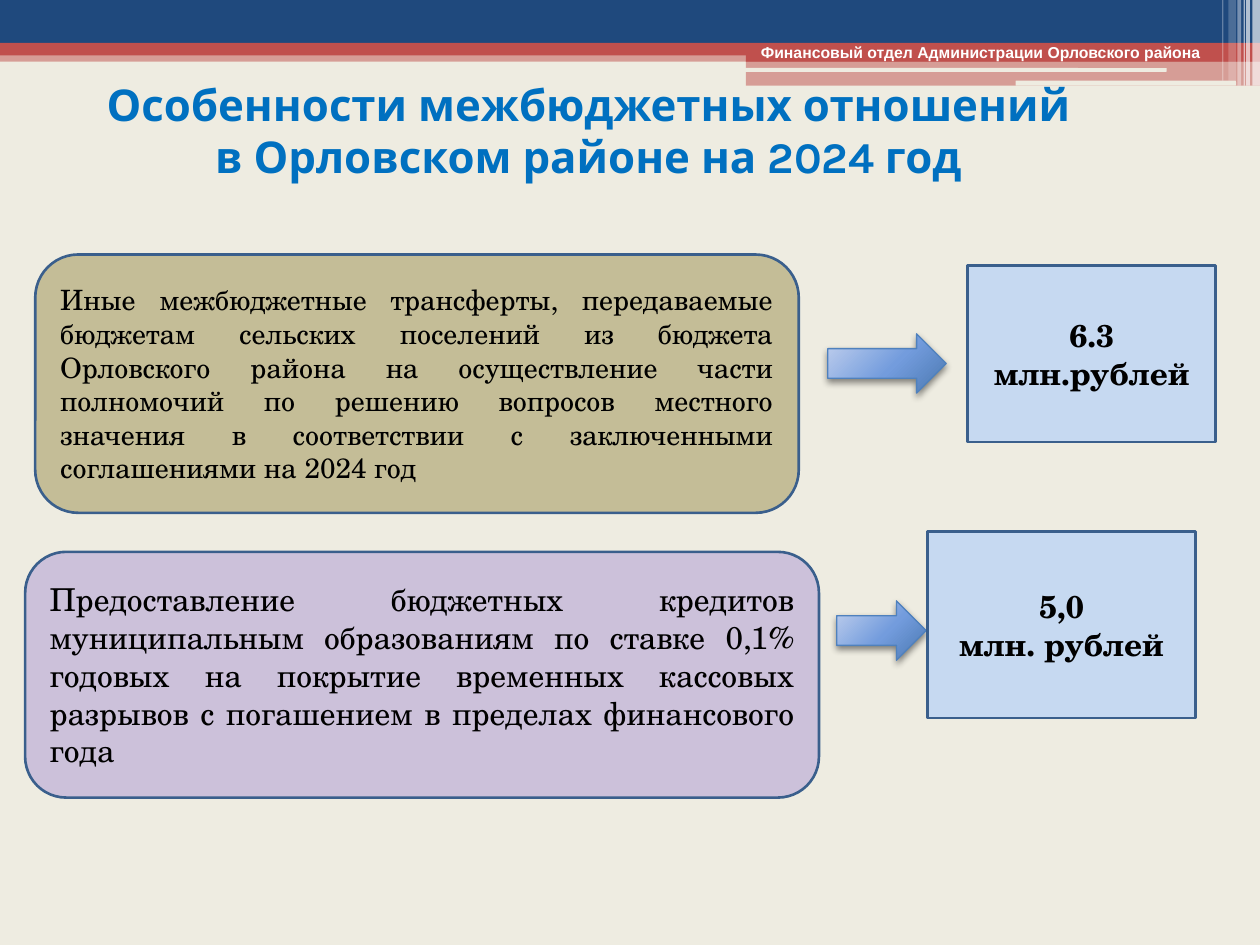
from dataclasses import dataclass

from lxml import etree
from pptx import Presentation
from pptx.dml.color import RGBColor
from pptx.enum.shapes import MSO_SHAPE
from pptx.enum.text import MSO_ANCHOR, MSO_AUTO_SIZE, PP_ALIGN
from pptx.oxml import parse_xml
from pptx.oxml.ns import nsdecls, qn
from pptx.util import Inches, Pt

RECT, ROUND, ARROW = MSO_SHAPE.RECTANGLE, MSO_SHAPE.ROUNDED_RECTANGLE, MSO_SHAPE.RIGHT_ARROW
LEFT, CENTER, JUSTIFY = PP_ALIGN.LEFT, PP_ALIGN.CENTER, PP_ALIGN.JUSTIFY
MIDDLE, TOP = MSO_ANCHOR.MIDDLE, MSO_ANCHOR.TOP


@dataclass(frozen=True)
class Theme:
    paper: str = "EEECE1"
    navy: str = "1F497D"
    red: str = "C0504D"
    white: str = "FFFFFF"
    black: str = "000000"
    title: str = "0070C0"
    amount: str = "C6D9F1"
    lilac: str = "CCC1DA"
    khaki: str = "C4BD97"
    border: str = "3A5F8C"
    arrow_line: str = "4F81BD"
    arrow_stops: tuple = ((0, "C4D2EE"), (55, "739CDD"), (100, "4A78B0"))
    body_font: str = "TeX Gyre Schola"
    title_font: str = "Karla"
    header_font: str = "Arial"
    title_size: int = 25
    body_size: int = 18
    small_size: int = 16
    header_size: int = 9


T = Theme()


def add_box(kind, at, fill, alpha=100, line=None, width=1.5):
    sp = s.shapes.add_shape(kind, *map(Inches, at))
    sp.shadow.inherit = False
    sp.fill.solid()
    sp.fill.fore_color.rgb = RGBColor.from_string(fill)
    if alpha < 100:
        color = sp._element.spPr.find(qn("a:solidFill"))[0]
        etree.SubElement(color, qn("a:alpha")).set("val", str(alpha * 1000))
    if line:
        sp.line.color.rgb = RGBColor.from_string(line)
        sp.line.width = Pt(width)
    else:
        sp.line.fill.background()
    return sp


def write(sp, text, size=T.body_size, font=T.body_font, color=T.black,
          bold=False, align=CENTER, anchor=MIDDLE):
    """Each newline starts a paragraph; a vertical tab breaks a line."""
    tf = sp.text_frame
    tf.word_wrap = True
    tf.auto_size = MSO_AUTO_SIZE.NONE
    tf.vertical_anchor = anchor
    tf.text = text
    for p in tf.paragraphs:
        p.alignment = align
        for r in p.runs:
            r.font.name, r.font.size, r.font.bold = font, Pt(size), bold
            r.font.color.rgb = RGBColor.from_string(color)


prs = Presentation()
prs.slide_width, prs.slide_height = Inches(10), Inches(7.5)
s = prs.slides.add_slide(prs.slide_layouts[5])
s.background.fill.solid()
s.background.fill.fore_color.rgb = RGBColor.from_string(T.paper)

# Header bands
for kind, at, fill, alpha in [
    (RECT, (0, 0.4, 10, 0.09), T.red, 50),
    (RECT, (0, 0, 10, 0.34), T.navy, 100),
    (RECT, (0, 0.34, 10, 0.1), T.red, 100),
    (RECT, (5.92, 0.39, 4.08, 0.1), T.red, 100),
    (RECT, (5.92, 0.48, 4.08, 0.2), T.red, 50),
    (ROUND, (5.91, 0.54, 3.35, 0.03), T.paper, 100),
    (ROUND, (8.06, 0.64, 1.75, 0.04), T.paper, 100),
]:
    add_box(kind, at, fill, alpha)

# Translucent stripes at the right edge
for left, width, height, alpha in [
    (9.94, 0.06, 0.68, 65), (9.89, 0.03, 0.68, 65), (9.87, 0.01, 0.68, 60),
    (9.82, 0.03, 0.68, 40), (9.75, 0.06, 0.64, 20), (9.7, 0.01, 0.64, 30),
]:
    add_box(RECT, (left, 0, width, height), T.white, alpha)

header = s.shapes.add_textbox(*map(Inches, (5.94, 0.29, 3.91, 0.25)))
write(header, "Финансовый отдел Администрации Орловского района", size=T.header_size,
      font=T.header_font, color=T.white, bold=True, align=LEFT, anchor=TOP)

title = s.shapes.title
title.left, title.top, title.width, title.height = map(Inches, (0, 0.52, 9.25, 1.02))
write(title, "Особенности межбюджетных отношений\vв Орловском районе на 2024 год",
      size=T.title_size, font=T.title_font, color=T.title, bold=True)
title.text_frame.paragraphs[0]._p.get_or_add_pPr().set("marL", str(Inches(0.09)))

# Each row: description, arrow, amount
rows = [
    ((0.28, 2.02, 6.06, 2.05), T.khaki, T.small_size,
     "Иные межбюджетные трансферты, передаваемые бюджетам сельских поселений из бюджета "
     "Орловского района на осуществление части полномочий по решению вопросов местного "
     "значения в соответствии с заключенными соглашениями на 2024 год",
     (6.57, 2.65, 0.94, 0.47), (7.68, 2.11, 1.97, 1.4), "6.3\nмлн.рублей"),
    ((0.2, 4.38, 6.3, 1.95), T.lilac, T.body_size,
     "Предоставление бюджетных кредитов муниципальным образованиям по ставке 0,1% годовых "
     "на покрытие временных кассовых разрывов с погашением в пределах финансового года",
     (6.64, 4.77, 0.71, 0.47), (7.36, 4.22, 2.13, 1.48), "5,0\nмлн. рублей"),
]
stops = "".join(f'<a:gs pos="{pos * 1000}"><a:srgbClr val="{color}"/></a:gs>'
                for pos, color in T.arrow_stops)
gradient = (f'<a:gradFill {nsdecls("a")} rotWithShape="1"><a:gsLst>{stops}</a:gsLst>'
            '<a:path path="circle"><a:fillToRect l="-40000" t="-90000" r="140000" b="190000"/>'
            '</a:path></a:gradFill>')
shadow = (f'<a:outerShdw {nsdecls("a")} blurRad="{Pt(4)}" dist="{Pt(2)}" dir="5400000" '
          f'rotWithShape="0"><a:srgbClr val="{T.black}"><a:alpha val="45000"/></a:srgbClr>'
          '</a:outerShdw>')

for text_at, fill, size, text, arrow_at, amount_at, amount in rows:
    write(add_box(ROUND, text_at, fill, line=T.border), text, size=size, align=JUSTIFY)

    arrow = add_box(ARROW, arrow_at, T.arrow_line, line=T.arrow_line, width=0.75)
    spPr = arrow._element.spPr
    spPr.replace(spPr.find(qn("a:solidFill")), parse_xml(gradient))
    spPr.find(qn("a:effectLst")).append(parse_xml(shadow))

    write(add_box(RECT, amount_at, T.amount, line=T.border), amount, bold=True)

prs.save("out.pptx")
